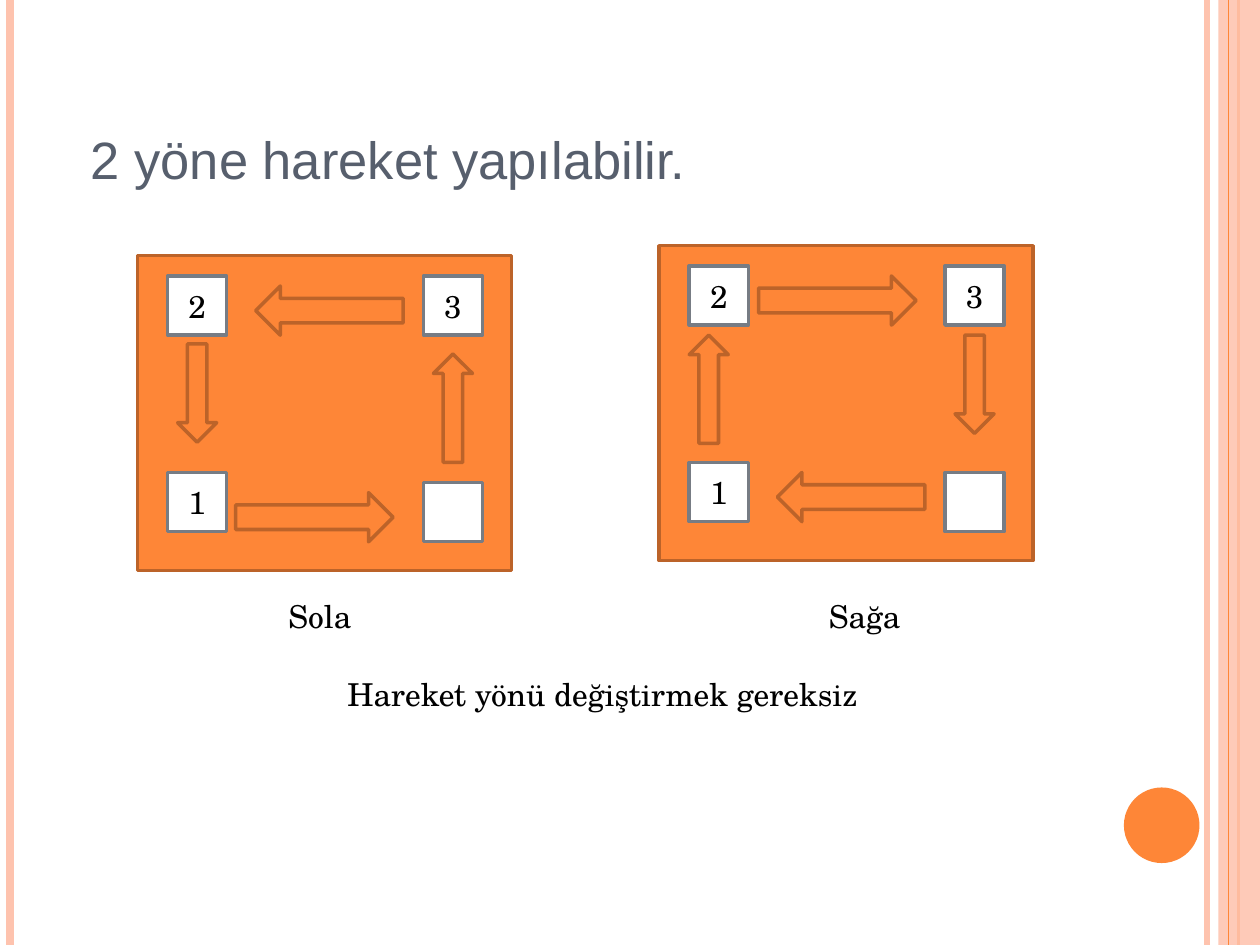
import pptx
import pptx.dml.color
import pptx.enum.shapes
import pptx.enum.text
import pptx.oxml.ns
import pptx.oxml.xmlchemy
import pptx.util
from pptx.util import Inches

SHAPE = pptx.enum.shapes.MSO_SHAPE
ORANGE, PALE, BROWN, GREY = "FE8637", "FEC3AE", "BC6329", "777C84"
SERIF = "TeX Gyre Schola"
qn = pptx.oxml.ns.qn


def color(hex_text):
    return pptx.dml.color.RGBColor.from_string(hex_text)


def add_block(shapes, kind, left, top, width, height, fill, outline=None):
    block = shapes.add_shape(kind, Inches(left), Inches(top), Inches(width), Inches(height))
    block.shadow.inherit = False
    block.fill.solid()
    block.fill.fore_color.rgb = color(fill)
    if outline:
        block.line.color.rgb = color(outline)
        block.line.width = pptx.util.Pt(2)
    else:
        block.line.fill.background()
    return block


deck = pptx.Presentation()
deck.slide_width, deck.slide_height = Inches(10), Inches(7.5)
slide = deck.slides.add_slide(deck.slide_layouts[5])
slide.background.fill.solid()
slide.background.fill.fore_color.rgb = color("FFFFFF")

# Side stripes; the band lies above the first three
band = None
for x, stripe_color, weight in [(9.58, PALE, 3), (0.08, PALE, 4.5),
                                (9.83, ORANGE, 1.5), (9.75, ORANGE, 0.75)]:
    if x == 9.75:
        band = add_block(slide.shapes, SHAPE.RECTANGLE, 9.67, 0, 0.33, 7.5, PALE)
    stripe = slide.shapes.add_connector(
        pptx.enum.shapes.MSO_CONNECTOR.STRAIGHT, Inches(x), 0, Inches(x), Inches(7.5))
    stripe.line.color.rgb = color(stripe_color)
    stripe.line.width = pptx.util.Pt(weight)
    properties = stripe._element.spPr
    properties.append(properties.makeelement(qn("a:effectLst"), {}))
band_color = band._element.spPr.find(qn("a:solidFill")).find(qn("a:srgbClr"))
band_color.append(band_color.makeelement(qn("a:alpha"), {"val": "87000"}))
add_block(slide.shapes, SHAPE.OVAL, 8.92, 6.25, 0.6, 0.6, ORANGE)

# Title
title = slide.shapes.title
title.left, title.top = Inches(0.62), Inches(0.31)
title.width, title.height = Inches(8.17), Inches(1.25)
title.text_frame.text = "2 yöne hareket yapılabilir."
title.text_frame.vertical_anchor = pptx.enum.text.MSO_ANCHOR.BOTTOM
heading = title.text_frame.paragraphs[0]
heading.alignment = pptx.enum.text.PP_ALIGN.LEFT
heading.font.name = "Arial"
heading.font.size = pptx.util.Pt(30)
heading.font.color.rgb = color("575F6D")

# Boards: tiles and arrows are placed from the board's corner
tiles = [("2", 0.24, 0.16), ("1", 0.24, 1.72), ("", 2.27, 1.8), ("3", 2.27, 0.16)]
clockwise = [(SHAPE.RIGHT_ARROW, 0.79, 0.24, 1.25, 0.39),
             (SHAPE.UP_ARROW, 0.24, 0.71, 0.31, 0.86),
             (SHAPE.LEFT_ARROW, 0.94, 1.8, 1.17, 0.39),
             (SHAPE.DOWN_ARROW, 2.35, 0.71, 0.31, 0.78)]
counterclockwise = [(SHAPE.RIGHT_ARROW, 0.78, 1.88, 1.25, 0.39),
                    (SHAPE.UP_ARROW, 2.35, 0.78, 0.31, 0.86),
                    (SHAPE.LEFT_ARROW, 0.94, 0.24, 1.17, 0.39),
                    (SHAPE.DOWN_ARROW, 0.32, 0.7, 0.31, 0.78)]
for board_left, board_top, arrows in [(5.23, 1.95, clockwise),
                                      (1.09, 2.03, counterclockwise)]:
    board = slide.shapes.add_group_shape().shapes
    add_block(board, SHAPE.RECTANGLE, board_left, board_top, 2.97, 2.5, ORANGE, BROWN)
    for number, dx, dy in tiles:
        tile = add_block(board, SHAPE.RECTANGLE, board_left + dx, board_top + dy,
                         0.47, 0.47, "FFFFFF", GREY)
        if number:
            tile.text_frame.text = number
            tile.text_frame.vertical_anchor = pptx.enum.text.MSO_ANCHOR.MIDDLE
            digit = tile.text_frame.paragraphs[0]
            digit.alignment = pptx.enum.text.PP_ALIGN.CENTER
            digit.font.name = SERIF
            digit.font.size = pptx.util.Pt(18)
            digit.font.color.rgb = color("000000")
    for kind, dx, dy, width, height in arrows:
        add_block(board, kind, board_left + dx, board_top + dy, width, height, ORANGE, BROWN)

# Captions
for words, left, top, width in [("Sola", 2.19, 4.69, 0.71), ("Sağa", 6.48, 4.69, 0.78),
                                ("Hareket yönü değiştirmek gereksiz", 2.66, 5.31, 4.3)]:
    caption = slide.shapes.add_textbox(Inches(left), Inches(top), Inches(width), Inches(0.4))
    caption.text_frame.word_wrap = False
    caption.text_frame.auto_size = pptx.enum.text.MSO_AUTO_SIZE.SHAPE_TO_FIT_TEXT
    caption.text_frame.text = words
    line = caption.text_frame.paragraphs[0]
    line.font.name = SERIF
    line.font.size = pptx.util.Pt(18)
    line.font.color.rgb = color("000000")

deck.save("out.pptx")
